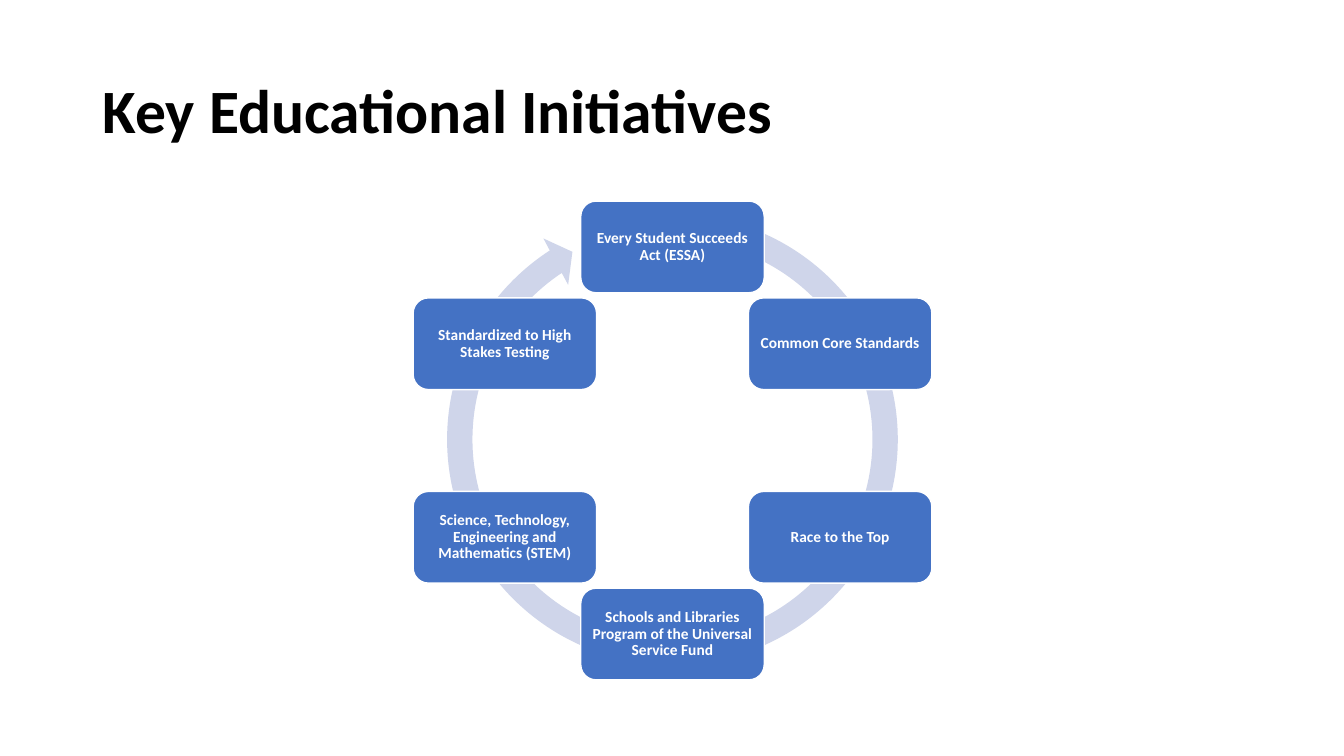
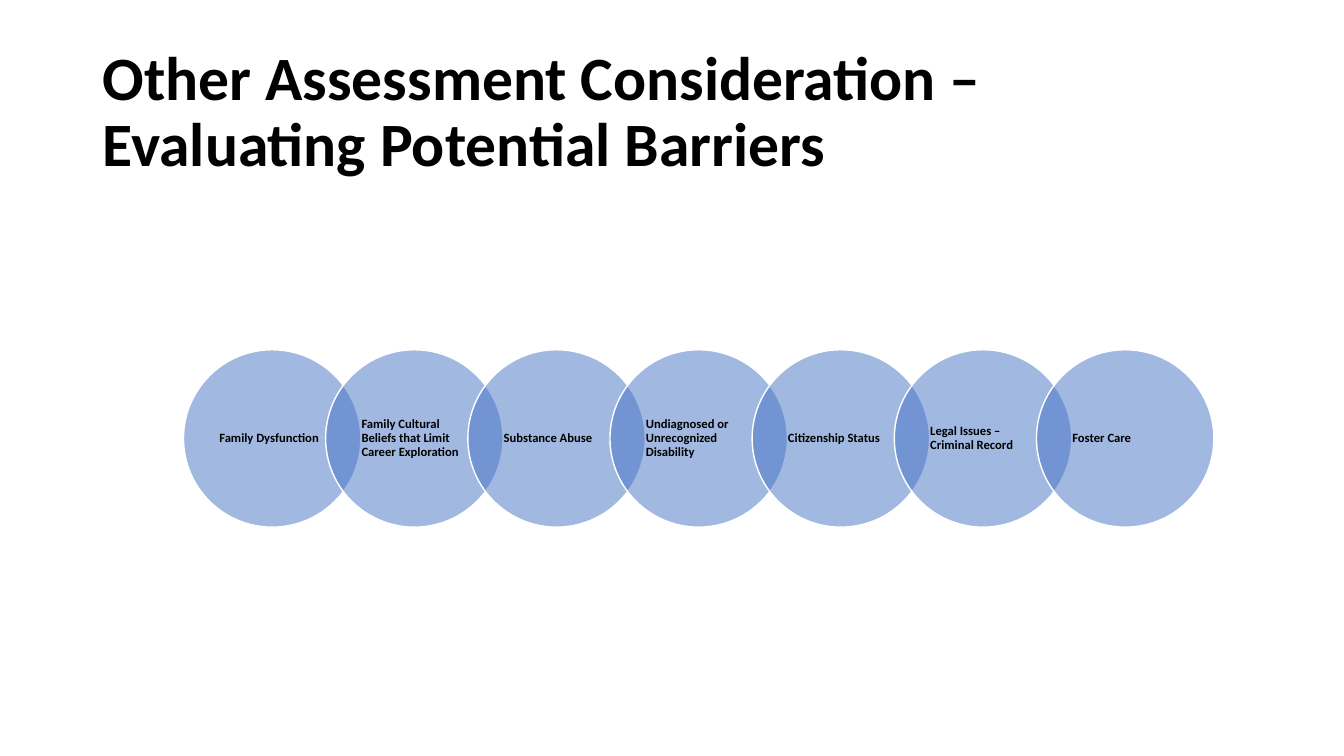
from dataclasses import dataclass
from math import cos, radians, sin

from lxml import etree
from pptx import Presentation
from pptx.dml.color import RGBColor
from pptx.enum.shapes import MSO_SHAPE
from pptx.enum.text import MSO_ANCHOR, MSO_AUTO_SIZE, PP_ALIGN
from pptx.oxml.ns import qn
from pptx.shapes.autoshape import Shape
from pptx.slide import Slide
from pptx.text.text import TextFrame
from pptx.util import Inches, Pt

BLUE = RGBColor(0x44, 0x72, 0xC4)
PALE = RGBColor(0xCF, 0xD5, 0xEA)
WHITE = RGBColor(0xFF, 0xFF, 0xFF)
BLACK = RGBColor(0x00, 0x00, 0x00)
FONT = "Calibri"

ROUND = MSO_SHAPE.ROUNDED_RECTANGLE
OVAL = MSO_SHAPE.OVAL
ARROW = MSO_SHAPE.CIRCULAR_ARROW
MIDDLE = MSO_ANCHOR.MIDDLE
LEFT, CENTER = PP_ALIGN.LEFT, PP_ALIGN.CENTER
TITLE_ONLY = 5

MID_X, MID_Y = 6.67, 4.37
RADIUS = 1.92
RING = 4.74
RING_ADJ = (0.053, 3.126, 142.039, 171.412, 0.055)
CHAIN_X, CHAIN_Y = 1.82, 3.47
STEP = 1.41

GOALS = (
    "Every Student Succeeds Act (ESSA)",
    "Common Core Standards",
    "Race to the Top",
    "Schools and Libraries Program of the Universal Service Fund",
    "Science, Technology, Engineering and Mathematics (STEM)",
    "Standardized to High Stakes Testing",
)
RISKS = (
    "Family Dysfunction",
    "Family Cultural Beliefs that Limit Career Exploration",
    "Substance Abuse",
    "Undiagnosed or Unrecognized Disability",
    "Citizenship Status",
    "Legal Issues – Criminal Record",
    "Foster Care",
)


@dataclass(frozen=True)
class Style:
    kind: MSO_SHAPE
    width: float
    height: float
    size: int
    ink: RGBColor
    align: PP_ALIGN
    pad_x: float
    pad_y: float
    alpha: int = 100


BOX = Style(ROUND, 1.82, 0.91, 11, WHITE, CENTER, 0.05, 0.05)
DISC = Style(OVAL, 1.76, 1.76, 9, BLACK, LEFT, 0.1, 0.01, alpha=50)


def write(frame: TextFrame, text: str, size: int, ink: RGBColor,
          align: PP_ALIGN) -> None:
    frame.word_wrap = True
    frame.auto_size = MSO_AUTO_SIZE.NONE
    frame.vertical_anchor = MIDDLE
    para = frame.paragraphs[0]
    para.alignment = align
    para.line_spacing = 0.9
    run = para.add_run()
    run.text = text
    font = run.font
    font.name, font.size, font.bold = FONT, Pt(size), True
    font.color.rgb = ink


def fade(shape: Shape, alpha: int) -> None:
    """Set the opacity of a solid fill, in percent."""
    color = shape.element.spPr.find(qn("a:solidFill")).find(qn("a:srgbClr"))
    etree.SubElement(color, qn("a:alpha")).set("val", str(alpha * 1000))


def add_node(slide: Slide, style: Style, left: float, top: float,
             text: str) -> None:
    node = slide.shapes.add_shape(style.kind, Inches(left), Inches(top),
                                  Inches(style.width), Inches(style.height))
    node.shadow.inherit = False
    node.fill.solid()
    node.fill.fore_color.rgb = BLUE
    if style.alpha < 100:
        fade(node, style.alpha)
    node.line.color.rgb = WHITE
    node.line.width = Pt(1)
    frame = node.text_frame
    frame.margin_left = frame.margin_right = Inches(style.pad_x)
    frame.margin_top = frame.margin_bottom = Inches(style.pad_y)
    write(frame, text, style.size, style.ink, style.align)


def add_page(deck: Presentation, text: str) -> Slide:
    slide = deck.slides.add_slide(deck.slide_layouts[TITLE_ONLY])
    title = slide.shapes.title
    title.left, title.top = Inches(0.92), Inches(0.4)
    title.width, title.height = Inches(11.5), Inches(1.45)
    write(title.text_frame, text, 44, BLACK, LEFT)
    return slide


def add_ring(slide: Slide) -> None:
    ring = slide.shapes.add_shape(
        ARROW, Inches(MID_X - RING / 2), Inches(MID_Y - RING / 2 - 0.01),
        Inches(RING), Inches(RING))
    for index, value in enumerate(RING_ADJ):
        ring.adjustments[index] = value
    ring.shadow.inherit = False
    ring.fill.solid()
    ring.fill.fore_color.rgb = PALE
    ring.line.fill.background()


def add_cycle(slide: Slide) -> None:
    """Place the goals clockwise from the top of the ring."""
    add_ring(slide)
    for index, goal in enumerate(GOALS):
        angle = radians(360 / len(GOALS) * index)
        left = MID_X + RADIUS * sin(angle) - BOX.width / 2
        top = MID_Y - RADIUS * cos(angle) - BOX.height / 2
        add_node(slide, BOX, left, top, goal)


def add_chain(slide: Slide) -> None:
    for index, risk in enumerate(RISKS):
        add_node(slide, DISC, CHAIN_X + STEP * index, CHAIN_Y, risk)


def main() -> None:
    deck = Presentation()
    deck.slide_width, deck.slide_height = Inches(13.33), Inches(7.5)
    add_cycle(add_page(deck, "Key Educational Initiatives"))
    add_chain(add_page(
        deck, "Other Assessment Consideration – Evaluating Potential Barriers"))
    deck.save("out.pptx")


if __name__ == "__main__":
    main()
